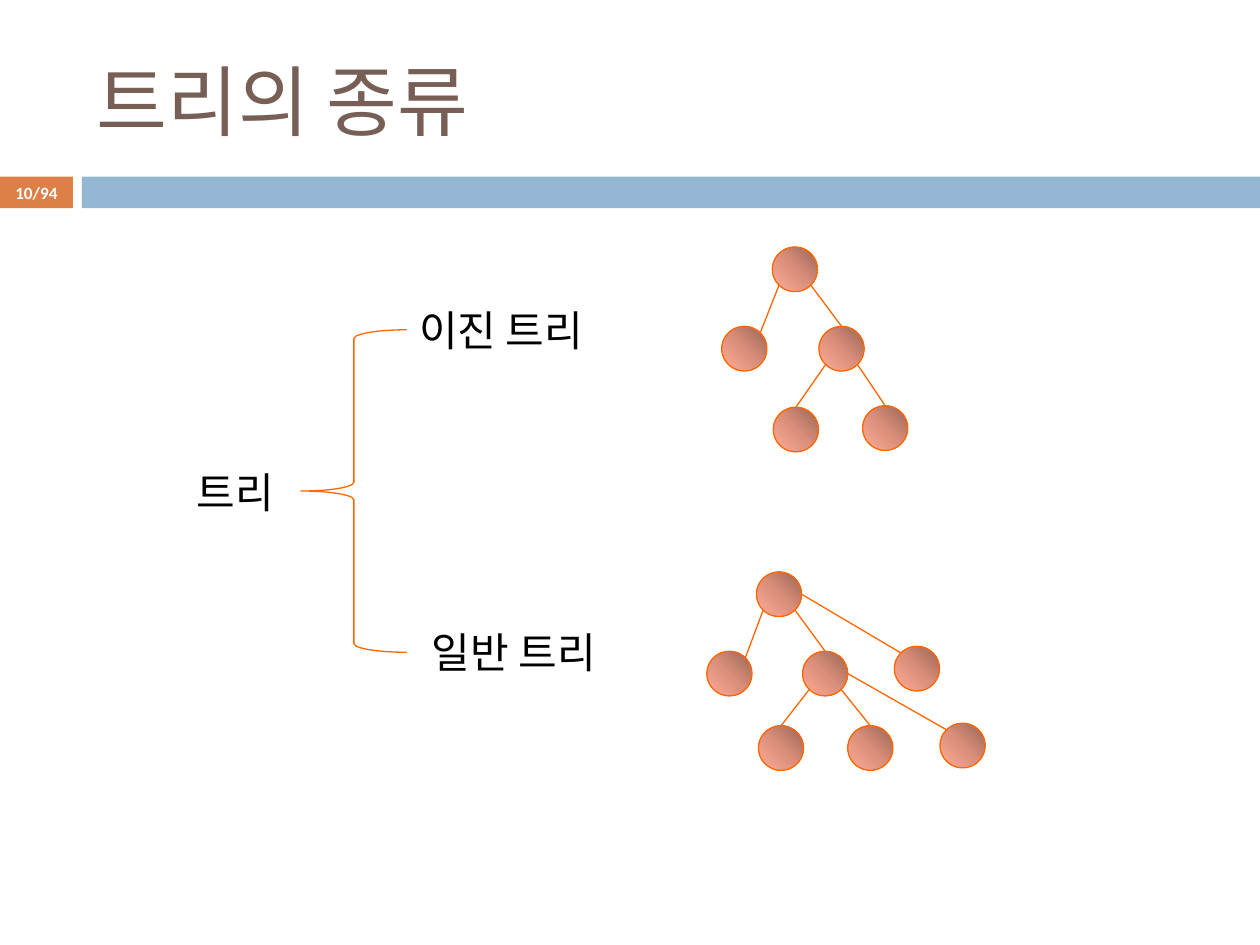
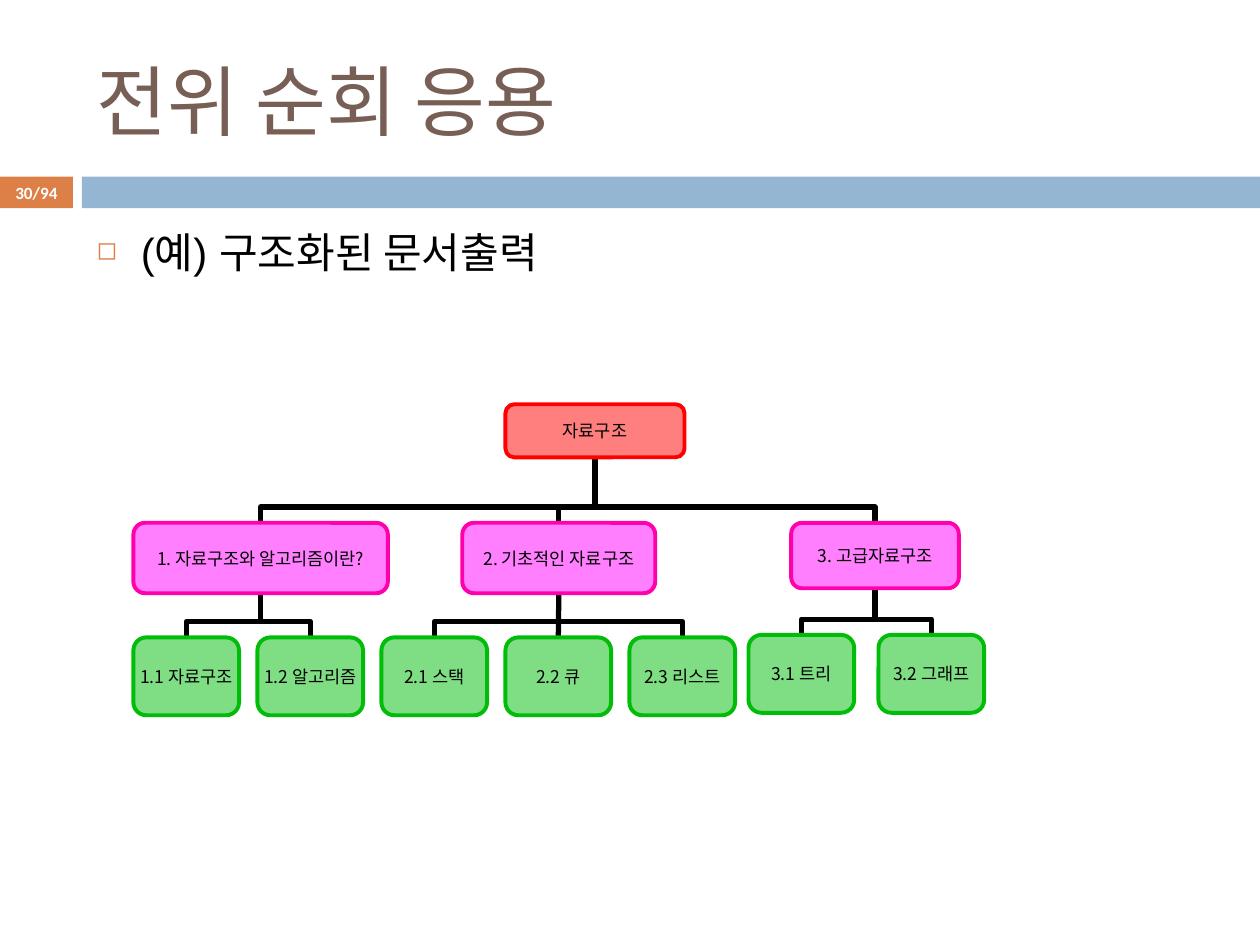
from lxml import etree
from pptx import Presentation
from pptx.dml.color import RGBColor
from pptx.enum.shapes import MSO_CONNECTOR as LINK, MSO_SHAPE as SHAPE
from pptx.enum.text import MSO_ANCHOR as ANCHOR, MSO_AUTO_SIZE as AUTOSIZE, PP_ALIGN as ALIGN
from pptx.oxml import parse_xml
from pptx.oxml.ns import nsdecls, qn
from pptx.util import Cm, Pt

KOREAN = "Noto Sans CJK KR"
BROWN, ACCENT, BAND = "775F55", "DD8047", "94B6D2"
BLACK, WHITE, ORANGE = "000000", "FFFFFF", "FF6600"
ROOT_STYLE = ("FF0000", "FF0000")
CHAPTER_STYLE = ("FF00FF", "FF00AD")
SECTION_STYLE = ("01BD0A", "01BD0A")

NODE_W, NODE_H = 0.91, 0.9
NODE_STOPS = [(0, "996556"), (50, "DA8F7B"), (100, "FFAC95")]
# Points on a node's rim, as fractions of its width and height
RIM = {"top": (0.5, 0), "right": (1, 0.5),
       "top left": (0.15, 0.15), "top right": (0.85, 0.15),
       "bottom left": (0.15, 0.85), "bottom right": (0.85, 0.85)}

# Each tree: node corners, then edges (parent, rim point, child, rim point)
COMMON_EDGES = [(0, "bottom left", 1, "top right"), (0, "bottom right", 2, "top"),
                (2, "bottom left", 3, "top"), (2, "bottom right", 4, "top")]
BINARY_TREE = ([(1.02, 0), (0, 1.6), (1.96, 1.6), (1.04, 3.23), (2.84, 3.2)],
               COMMON_EDGES)
GENERAL_TREE = ([(1, 0), (0, 1.6), (1.93, 1.6), (1.04, 3.1), (2.84, 3.1),
                 (4.7, 3.05), (3.78, 1.5)],
                COMMON_EDGES + [(0, "right", 6, "top left"), (2, "right", 5, "top left")])

# Chapter: title, left, width, height, then sections: left, step, top, titles
CHAPTERS = [
    ("1. 자료구조와 알고리즘이란?", 0, 5.13, 1.42,
     (0, 2.5, 4.7, ["1.1 자료구조", "1.2 알고리즘"])),
    ("2. 기초적인 자료구조", 6.63, 3.89, 1.42,
     (5, 2.5, 4.7, ["2.1 스택", "2.2 큐", "2.3 리스트"])),
    ("3. 고급자료구조", 13.26, 3.38, 1.32,
     (12.4, 2.62, 4.65, ["3.1 트리", "3.2 그래프"])),
]
CHAPTER_TOP, SECTION_W, SECTION_H = 2.39, 2.13, 1.57
ELBOW_RISE = Cm(0.32)


def color(hex_text):
    return RGBColor.from_string(hex_text)


def cm_box(*lengths):
    return [Cm(length) for length in lengths]


def add_run(paragraph, text, size, font=KOREAN, ink=BLACK, bold=False):
    run = paragraph.add_run()
    run.text = text
    run.font.name, run.font.size, run.font.bold = font, Pt(size), bold
    run.font.color.rgb = color(ink)
    east_asian = etree.Element(qn("a:ea"), typeface=KOREAN)
    run.font._element.find(qn("a:latin")).addnext(east_asian)


def clear_insets(frame):
    frame.margin_left = frame.margin_right = 0
    frame.margin_top = frame.margin_bottom = 0


def add_plain_shape(slide, kind, box, fill=None, line=None, line_width=0.75):
    shape = slide.shapes.add_shape(kind, *cm_box(*box))
    shape.shadow.inherit = False
    if fill:
        shape.fill.solid()
        shape.fill.fore_color.rgb = color(fill)
    else:
        shape.fill.background()
    if line:
        shape.line.color.rgb = color(line)
        shape.line.width = Pt(line_width)
    else:
        shape.line.fill.background()
    return shape


def add_link(slide, kind, ends, ink, width):
    link = slide.shapes.add_connector(kind, *ends)
    link.line.color.rgb = color(ink)
    link.line.width = Pt(width)
    etree.SubElement(link._element.spPr, qn("a:effectLst"))
    return link


def add_titled_slide(prs, title_text, page):
    slide = prs.slides.add_slide(prs.slide_layouts[5])
    # Band with the page number
    add_plain_shape(slide, SHAPE.RECTANGLE, (0, 3.56, 1.47, 0.64), ACCENT)
    add_plain_shape(slide, SHAPE.RECTANGLE, (1.65, 3.56, 23.75, 0.64), BAND)
    number = slide.shapes.add_textbox(*cm_box(0, 3.54, 1.47, 0.68)).text_frame
    number.word_wrap = True
    number.vertical_anchor = ANCHOR.MIDDLE
    clear_insets(number)
    number.paragraphs[0].alignment = ALIGN.CENTER
    add_run(number.paragraphs[0], page, 9.8, "Calibri", WHITE, True)
    # Title
    title = slide.shapes.title
    title.left, title.top, title.width, title.height = cm_box(1.7, 0.64, 22.66, 2.74)
    frame = title.text_frame
    frame.auto_size = AUTOSIZE.NONE
    frame.vertical_anchor = ANCHOR.MIDDLE
    frame.paragraphs[0].alignment = ALIGN.LEFT
    add_run(frame.paragraphs[0], title_text, 44, "Calibri", BROWN)
    return slide


def add_label(slide, text, box):
    frame = slide.shapes.add_textbox(*cm_box(*box)).text_frame
    frame.word_wrap = False
    frame.auto_size = AUTOSIZE.SHAPE_TO_FIT_TEXT
    frame.paragraphs[0].alignment = ALIGN.CENTER
    add_run(frame.paragraphs[0], text, 24)


def shade_node(node):
    stops = "".join(f'<a:gs pos="{pos * 1000}"><a:srgbClr val="{ink}"/></a:gs>'
                    for pos, ink in NODE_STOPS)
    gradient = parse_xml(
        f'<a:gradFill {nsdecls("a")} rotWithShape="1"><a:gsLst>{stops}</a:gsLst>'
        '<a:path path="circle"><a:fillToRect l="100000" b="100000"/></a:path></a:gradFill>')
    properties = node._element.spPr
    properties.replace(properties.find(qn("a:noFill")), gradient)


def add_node_tree(slide, left, top, tree):
    corners, edges = tree
    for x, y in corners:
        shade_node(add_plain_shape(slide, SHAPE.OVAL,
                                   (left + x, top + y, NODE_W, NODE_H), line=ORANGE))

    def rim_point(node, side):
        (x, y), (across, down) = corners[node], RIM[side]
        return cm_box(left + x + across * NODE_W, top + y + down * NODE_H)

    for parent, start, child, end in edges:
        add_link(slide, LINK.STRAIGHT, rim_point(parent, start) + rim_point(child, end),
                 ORANGE, 0.75)


def add_kinds_overview(slide, left, top):
    brace = add_plain_shape(slide, SHAPE.LEFT_BRACE,
                            (left + 2.49, top + 0.63, 2.13, 6.5), line=ORANGE)
    brace.adjustments[0] = 0.083
    add_label(slide, "트리 ", (left, top + 3.25, 2.51, 1.27))
    add_label(slide, "이진 트리 ", (left + 4.37, top, 4.5, 1.3))
    add_label(slide, "일반 트리 ", (left + 4.62, top + 6.48, 4.5, 1.3))


def add_bullet(slide, text, box):
    frame = slide.shapes.add_textbox(*cm_box(*box)).text_frame
    frame.word_wrap = True
    paragraph = frame.paragraphs[0]
    properties = paragraph._p.get_or_add_pPr()
    properties.set("marL", str(Cm(0.89)))
    properties.set("indent", str(-Cm(0.89)))
    tint = etree.SubElement(properties, qn("a:buClr"))
    etree.SubElement(tint, qn("a:srgbClr"), val=ACCENT)
    etree.SubElement(properties, qn("a:buSzPct"), val="60000")
    etree.SubElement(properties, qn("a:buChar"), char="◻")
    add_run(paragraph, text, 24, "Arial")


def add_topic(slide, text, box, style):
    fill, line = style
    topic = add_plain_shape(slide, SHAPE.ROUNDED_RECTANGLE, box, fill, line, 2.25)
    tint = topic._element.spPr.find(qn("a:solidFill")).find(qn("a:srgbClr"))
    etree.SubElement(tint, qn("a:alpha"), val="50000")
    frame = topic.text_frame
    frame.word_wrap = False
    frame.vertical_anchor = ANCHOR.MIDDLE
    clear_insets(frame)
    frame.paragraphs[0].alignment = ALIGN.CENTER
    add_run(frame.paragraphs[0], text, 10)
    return topic


def join_topics(slide, child, parent):
    """Link the top of a child to the bottom of its parent, behind the boxes."""
    start_x, start_y = child.left + child.width // 2, child.top
    end_x, end_y = parent.left + parent.width // 2, parent.top + parent.height
    across, rise = end_x - start_x, start_y - end_y
    straight = abs(across) < Cm(0.1)
    link = add_link(slide, LINK.STRAIGHT if straight else LINK.ELBOW,
                    (start_x, start_y, end_x, end_y), BLACK, 3)
    link.begin_connect(child, 0)
    link.end_connect(parent, 2)
    if not straight:
        # Turn the elbow so that it leaves the child upwards
        frame = link._element.spPr.xfrm
        frame.flipH, frame.flipV = across < 0, False
        frame.rot = 90 if across < 0 else 270
        link.width, link.height = rise, abs(across)
        link.left = (start_x + end_x - rise) // 2
        link.top = (start_y + end_y - abs(across)) // 2
        guides = link._element.spPr.find(qn("a:prstGeom")).get_or_add_avLst()
        etree.SubElement(guides, qn("a:gd"), name="adj1",
                         fmla=f"val {round(ELBOW_RISE / rise * 100000)}")
    slide.shapes[0]._element.addprevious(link._element)


def add_outline_tree(slide, left, top):
    root = add_topic(slide, "자료구조", (left + 7.5, top, 3.61, 1.07), ROOT_STYLE)
    for title, x, width, height, (first, step, section_top, sections) in CHAPTERS:
        chapter = add_topic(slide, title, (left + x, top + CHAPTER_TOP, width, height),
                            CHAPTER_STYLE)
        join_topics(slide, chapter, root)
        for i, name in enumerate(sections):
            section = add_topic(slide, name, (left + first + i * step, top + section_top,
                                              SECTION_W, SECTION_H), SECTION_STYLE)
            join_topics(slide, section, chapter)


def main():
    prs = Presentation()
    prs.slide_width, prs.slide_height = Cm(25.4), Cm(19.05)

    kinds = add_titled_slide(prs, "트리의 종류", "10/94")
    add_kinds_overview(kinds, 3.58, 6.02)
    add_node_tree(kinds, 14.55, 4.98, BINARY_TREE)
    add_node_tree(kinds, 14.25, 11.53, GENERAL_TREE)

    preorder = add_titled_slide(prs, "전위 순회 응용", "30/94")
    add_bullet(preorder, "(예) 구조화된 문서출력", (1.7, 4.45, 22.66, 12.5))
    add_outline_tree(preorder, 2.69, 8.15)

    prs.save("out.pptx")


if __name__ == "__main__":
    main()
